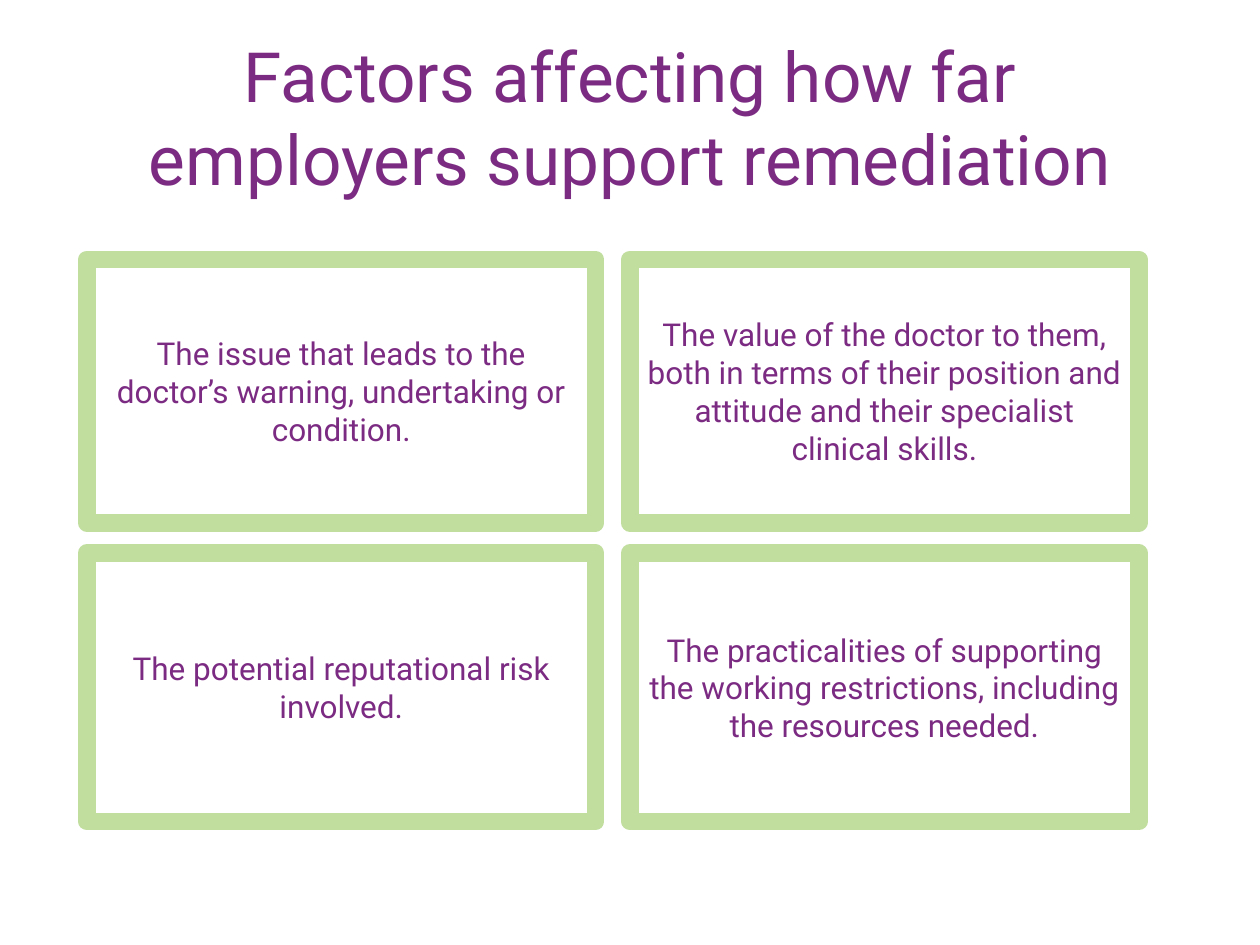
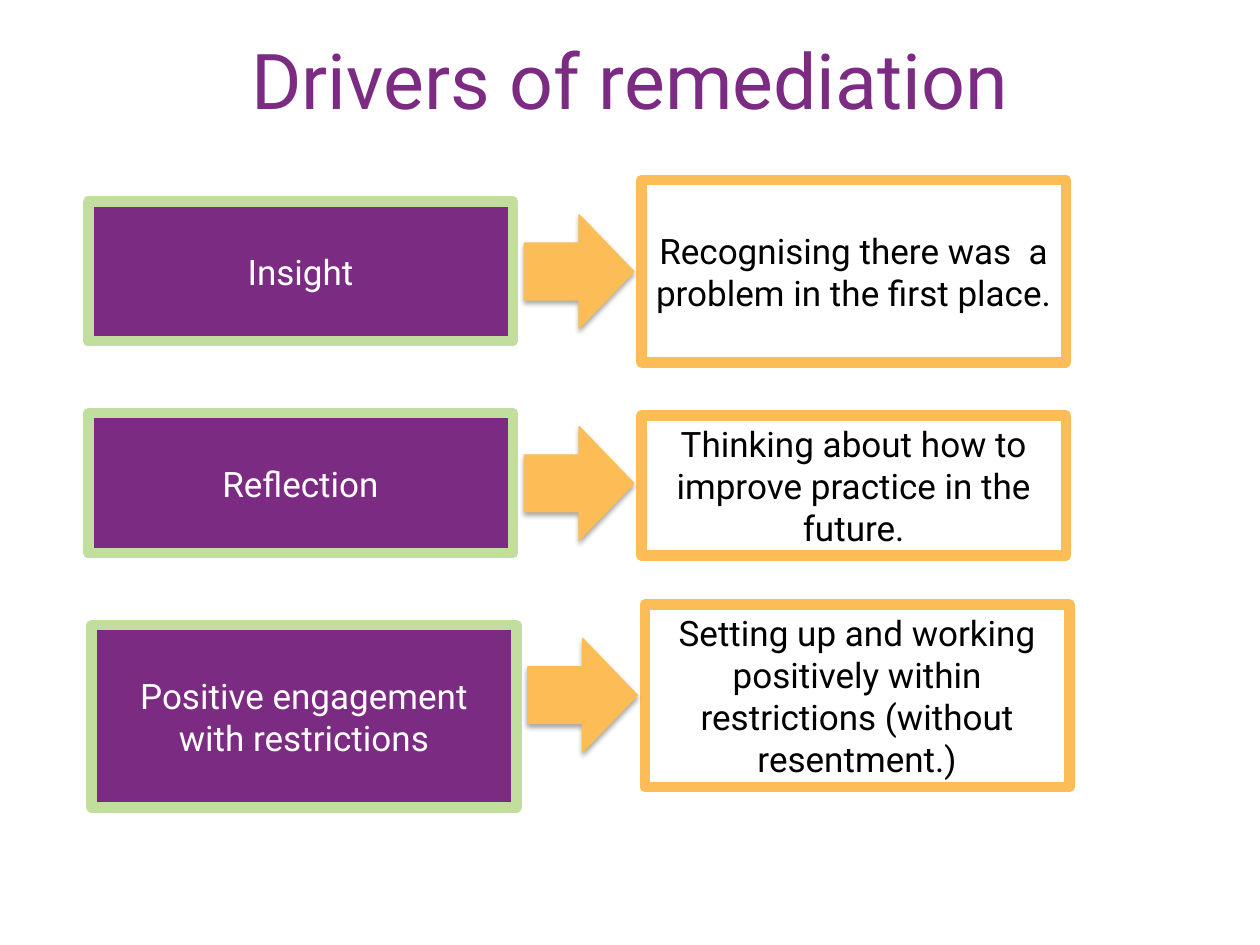
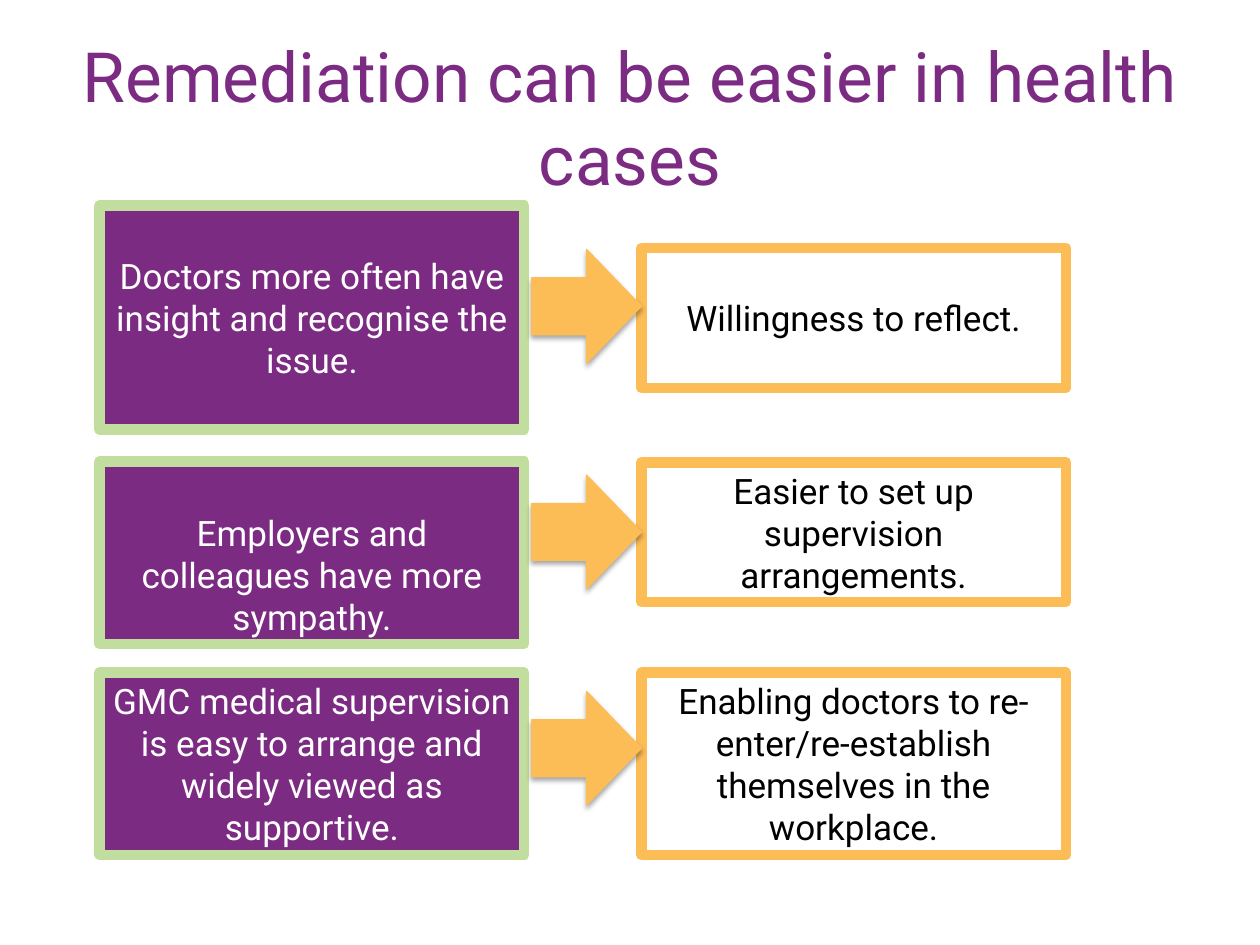
from lxml.etree import SubElement
from pptx import Presentation
from pptx.dml.color import RGBColor
from pptx.enum.shapes import MSO_SHAPE as Preset
from pptx.enum.text import MSO_ANCHOR as Anchor, MSO_AUTO_SIZE as AutoSize, PP_ALIGN as Align
from pptx.oxml.ns import qn
from pptx.util import Cm, Pt

FONT = "Roboto"
PURPLE, GREEN, ORANGE = "7C2B83", "C1DE9F", "FCBD56"
WHITE, BLACK = "FFFFFF", "000000"
TITLE_ONLY = 5


def colour(hex_code):
    return RGBColor.from_string(hex_code)


class Deck:
    """Holds the shared style and the slide being built."""

    def __init__(self):
        self.prs = Presentation()
        self.prs.slide_width, self.prs.slide_height = Cm(25.4), Cm(19.05)
        self.slide = None

    def add_text(self, frame, text, size, hex_code, anchor=Anchor.MIDDLE):
        frame.word_wrap = True
        frame.auto_size = AutoSize.NONE
        frame.vertical_anchor = anchor
        paragraph = frame.paragraphs[0]
        paragraph.alignment = Align.CENTER
        run = paragraph.add_run()
        run.text = text
        run.font.name, run.font.size = FONT, Pt(size)
        run.font.color.rgb = colour(hex_code)

    def new_slide(self, heading, top=0.76, size=39.6):
        self.slide = self.prs.slides.add_slide(self.prs.slide_layouts[TITLE_ONLY])
        title = self.slide.shapes.title
        title.left, title.top, title.width, title.height = Cm(1.27), Cm(top), Cm(22.86), Cm(3.18)
        self.add_text(title.text_frame, heading, size, PURPLE)

    def shape(self, preset, left, top, width, height, fill, line, weight):
        shape = self.slide.shapes.add_shape(preset, Cm(left), Cm(top), Cm(width), Cm(height))
        shape.shadow.inherit = False
        if fill:
            shape.fill.solid()
            shape.fill.fore_color.rgb = colour(fill)
        else:
            shape.fill.background()
        shape.line.color.rgb = colour(line)
        shape.line.width = Pt(weight)
        return shape

    def factor(self, left, top, height, text):
        box = self.shape(Preset.RECTANGLE, left, top, 10.26, height, None, GREEN, 10)
        self.add_text(box.text_frame, text, 18, PURPLE)

    def cause(self, left, top, height, text, anchor=Anchor.MIDDLE):
        box = self.shape(Preset.RECTANGLE, left, top, 8.56, height, PURPLE, GREEN, 6)
        self.add_text(box.text_frame, text, 20, WHITE, anchor)

    def effect(self, left, top, height, text):
        box = self.shape(Preset.RECTANGLE, left, top, 8.56, height, WHITE, ORANGE, 6)
        self.add_text(box.text_frame, text, 20, BLACK)

    def arrow(self, left, top):
        arrow = self.shape(Preset.RIGHT_ARROW, left, top, 2.21, 2.29, ORANGE, ORANGE, 0.75)
        # Soft shadow straight below
        effects = arrow._element.spPr.find(qn("a:effectLst"))
        shadow = SubElement(effects, qn("a:outerShdw"), blurRad=str(Pt(3.1)), dist=str(Pt(1.8)),
                            dir="5400000", rotWithShape="0")
        black = SubElement(shadow, qn("a:srgbClr"), val=BLACK)
        SubElement(black, qn("a:alpha"), val="35000")


def factors_slide(deck):
    deck.new_slide("Factors affecting how far employers support remediation")
    rows = [
        (5.23, 5.31, ["The issue that leads to the doctor’s warning, undertaking or condition.",
                      "The value of the doctor to them, both in terms of their position and "
                      "attitude and their specialist clinical skills."]),
        (11.15, 5.41, ["The potential reputational risk involved.",
                       "The practicalities of supporting the working restrictions, "
                       "including the resources needed."]),
    ]
    for top, height, factors in rows:
        for left, factor in zip((1.75, 12.7), factors):
            deck.factor(left, top, height, factor)


def drivers_slide(deck):
    deck.new_slide("Drivers of remediation", top=0, size=44)
    # Shift, driver and its height, meaning with its top and height
    rows = [
        (0, "Insight", 2.82, "Recognising there was  a problem in the first place.", 3.63, 3.68),
        (0, "Reflection", 2.82, "Thinking about how to improve practice in the future.", 8.38, 2.82),
        (0.07, "Positive engagement with restrictions", 3.68,
         "Setting up and working positively within restrictions (without resentment.)", 12.19, 3.68),
    ]
    for index, (shift, driver, driver_height, meaning, meaning_top, meaning_height) in enumerate(rows):
        top = 4.06 + 4.27 * index
        deck.cause(1.78 + shift, top, driver_height, driver)
        deck.effect(12.93 + shift, meaning_top, meaning_height, meaning)
        deck.arrow(10.57 + shift, top + 0.27)


def health_slide(deck):
    deck.new_slide("Remediation can be easier in health cases")
    # Reason, benefit (each with top and height), then arrow top
    rows = [
        ((4.14, 4.52, "Doctors more often have insight and recognise the issue."),
         (5.0, 2.82, "Willingness to reflect."), 5.03),
        ((9.3, 3.68, "Employers and colleagues have more sympathy.", Anchor.BOTTOM),
         (9.32, 2.82, "Easier to set up supervision arrangements."), 9.58),
        ((13.56, 3.68, "GMC medical supervision is easy to arrange and widely viewed as supportive."),
         (13.56, 3.68, "Enabling doctors to re-enter/re-establish themselves in the workplace."), 13.94),
    ]
    for reason, benefit, arrow_top in rows:
        deck.cause(2.01, *reason)
        deck.effect(12.93, *benefit)
        deck.arrow(10.72, arrow_top)


def main():
    deck = Deck()
    factors_slide(deck)
    drivers_slide(deck)
    health_slide(deck)
    deck.prs.save("out.pptx")


if __name__ == "__main__":
    main()
